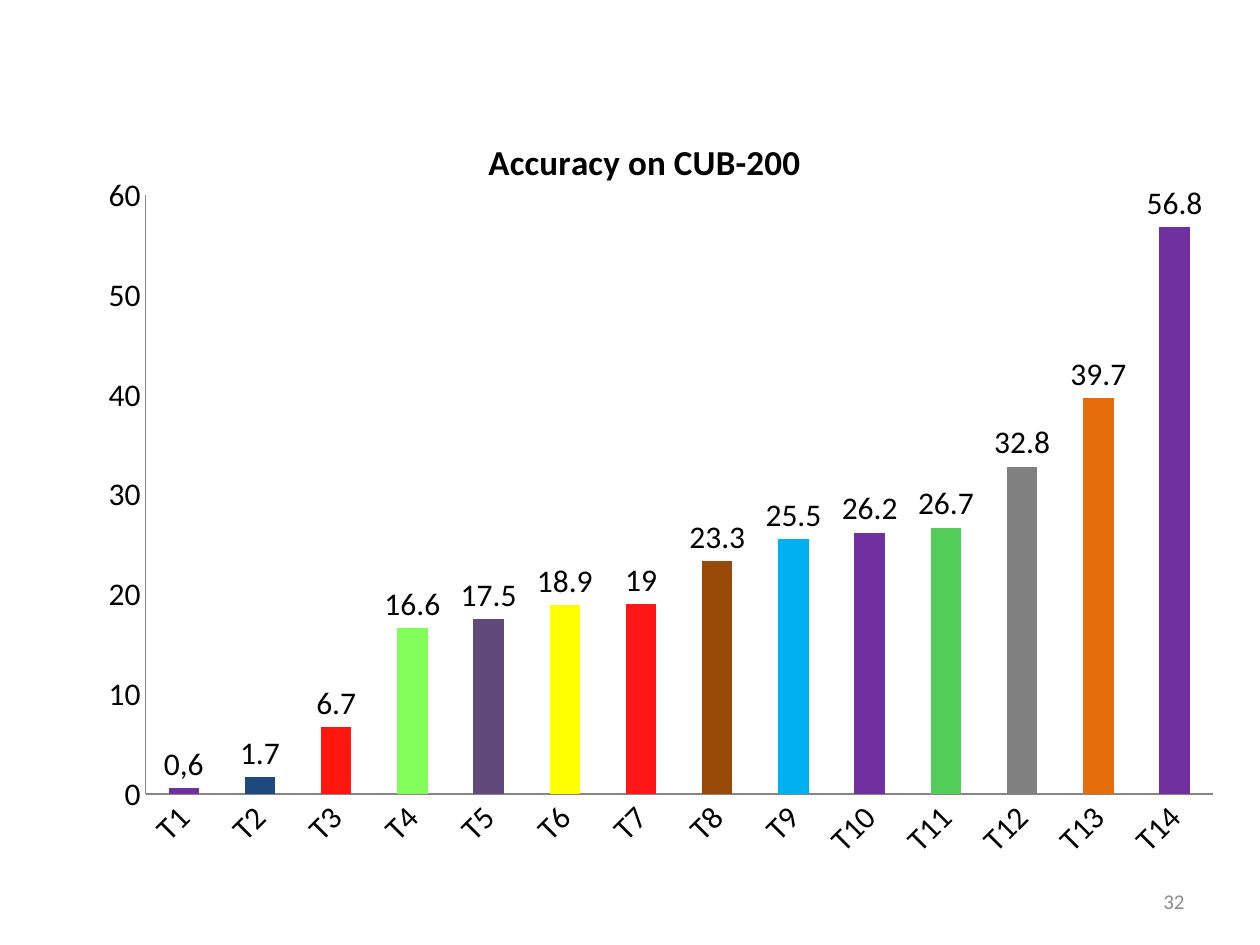
from pptx import Presentation
from pptx.chart.data import CategoryChartData
from pptx.dml.color import RGBColor
from pptx.enum.chart import XL_CHART_TYPE, XL_LABEL_POSITION, XL_TICK_MARK
from pptx.enum.text import MSO_ANCHOR, PP_ALIGN
from pptx.oxml import parse_xml
from pptx.oxml.ns import nsdecls, qn
from pptx.util import Inches, Pt


def write(tf, text, size=18, bold=False, color="000000", align=None):
    p = tf.paragraphs[0]
    p.alignment = align
    r = p.add_run()
    r.text = text
    r.font.name = "Calibri"
    r.font.size = Pt(size)
    r.font.bold = bold
    r.font.color.rgb = RGBColor.from_string(color)


def set_layout(parent, index, **places):
    """Place a chart part by fractions of the chart area."""
    old = parent.find(qn("c:layout"))
    if old is not None:
        parent.remove(old)
    target = '<c:layoutTarget val="inner"/>' if "w" in places else ""
    modes = "".join(f'<c:{k}Mode val="edge"/>' for k in "xy")
    values = "".join(f'<c:{k} val="{v}"/>' for k, v in places.items())
    parent.insert(index, parse_xml(
        f'<c:layout {nsdecls("c")}><c:manualLayout>{target}{modes}{values}'
        "</c:manualLayout></c:layout>"))


prs = Presentation()
prs.slide_width, prs.slide_height = Inches(10), Inches(7.5)
s = prs.slides.add_slide(prs.slide_layouts[6])

# Accuracy of each method and its bar colour
accuracy = [0.6, 1.7, 6.7, 16.6, 17.5, 18.9, 19, 23.3, 25.5, 26.2, 26.7, 32.8, 39.7, 56.8]
colors = ["7030A0", "1F497D", "FF160E", "82FF5B", "604A7B", "FFFF00", "FF1616",
          "984807", "00B0F0", "7030A0", "53CD59", "808080", "E46C0A", "7030A0"]
data = CategoryChartData()
data.categories = [f"T{i}" for i in range(1, len(accuracy) + 1)]
data.add_series("Series 1", accuracy)

# Chart
chart = s.shapes.add_chart(XL_CHART_TYPE.COLUMN_CLUSTERED, Inches(0.42), Inches(0.46),
                           Inches(9.21), Inches(6.42), data).chart
chart.font.name = "Calibri"
chart.font.size = Pt(18)
chart.font.color.rgb = RGBColor.from_string("000000")
chart.has_legend = False
chart.has_title = True
write(chart.chart_title.text_frame, "Accuracy on CUB-200", size=20, bold=True)
set_layout(chart.chart_title._element, 1, x=0.37, y=0.09)

# Plot area and bars
plot = chart.plots[0]
plot.gap_width = 150
plot.vary_by_categories = False
set_layout(plot._element.getparent(), 0, x=0.08, y=0.17, w=0.92, h=0.74)
series = plot.series[0]
series.invert_if_negative = False
for i, color in enumerate(colors):
    fill = series.points[i].format.fill
    fill.solid()
    fill.fore_color.rgb = RGBColor.from_string(color)

# Value labels; the first one is written with a comma
labels = series.data_labels
labels.show_value = True
labels.position = XL_LABEL_POSITION.OUTSIDE_END
first = series.points[0].data_label
write(first.text_frame, "0,6")
first.position = XL_LABEL_POSITION.OUTSIDE_END

# Axes
for axis in (chart.category_axis, chart.value_axis):
    axis.has_major_gridlines = False
    axis.major_tick_mark = axis.minor_tick_mark = XL_TICK_MARK.NONE
    axis.format.line.color.rgb = RGBColor.from_string("868686")
    axis.format.line.width = Pt(0.75)
chart.value_axis.minimum_scale = 0
chart.value_axis.maximum_scale = 60
chart.value_axis.major_unit = 10
category_labels = chart.category_axis.tick_labels
category_labels.font.size = Pt(18)
chart.category_axis._element.find(qn("c:txPr")).find(qn("a:bodyPr")).set("rot", "-2700000")

# Slide number
tf = s.shapes.add_textbox(Inches(7.17), Inches(6.95), Inches(2.33), Inches(0.4)).text_frame
tf.word_wrap = True
tf.vertical_anchor = MSO_ANCHOR.MIDDLE
write(tf, "32", size=12, color="8C8C8C", align=PP_ALIGN.RIGHT)

prs.save("out.pptx")
